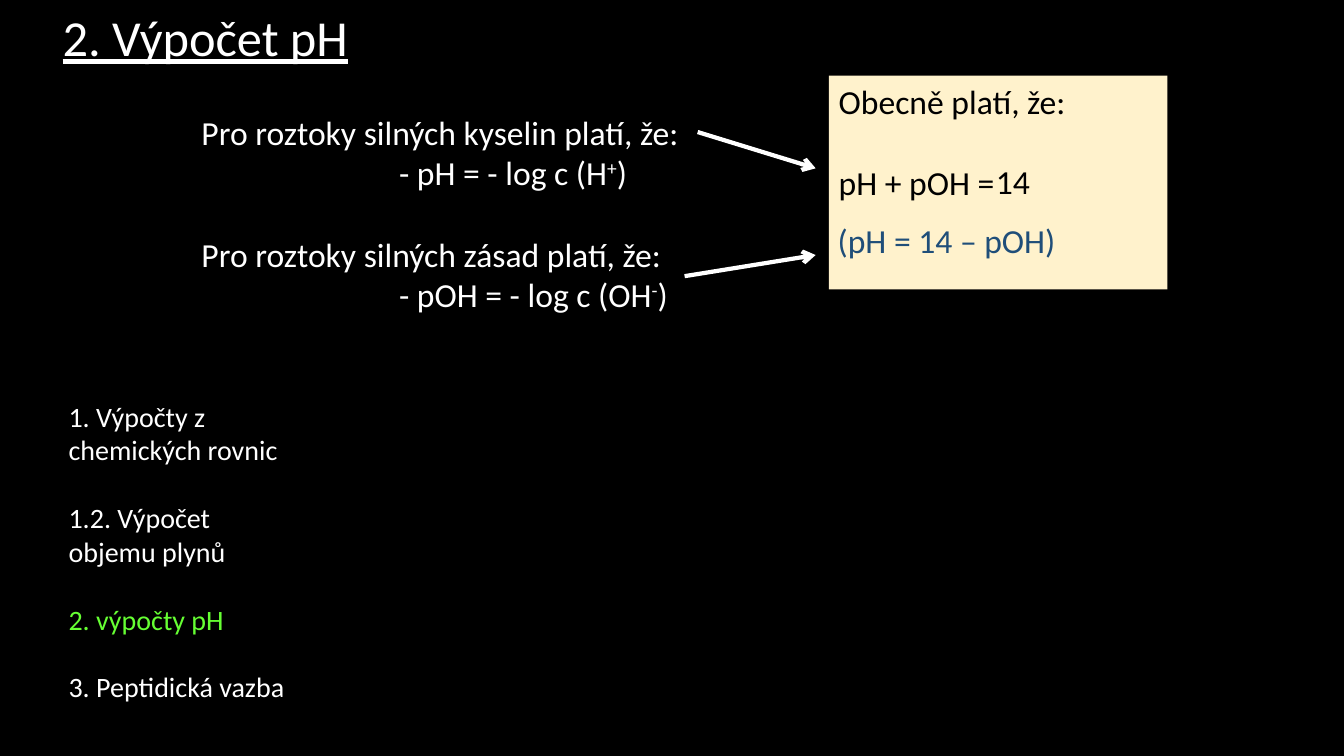
"""Build a slide on computing pH, with a chapter list."""
from dataclasses import dataclass

from lxml import etree
from pptx import Presentation
from pptx import util as u
from pptx.dml.color import RGBColor
from pptx.enum import shapes, text
from pptx.oxml import ns


@dataclass(frozen=True)
class Theme:
    """Colours, font and type sizes of the slide."""
    font: str = "Calibri"
    back: str = "000000"
    light: str = "FFFFFF"
    dark: str = "000000"
    note: str = "FFF2CC"
    blue: str = "1F4E79"
    green: str = "66FF33"
    head: int = 36
    main: int = 24
    list: int = 20


THEME = Theme()
LINE = 1.22


def paint(fill, color):
    """Give a fill one solid colour."""
    fill.solid()
    fill.fore_color.rgb = RGBColor.from_string(color)


def place(shape, box):
    """Move a shape to a box given in inches."""
    shape.left, shape.top, shape.width, shape.height = map(u.Inches, box)


def style(para, size, color):
    """Format a paragraph's runs and clear its spacing."""
    para.alignment = text.PP_ALIGN.LEFT
    para.space_before = para.space_after = u.Pt(0)
    for run in para.runs:
        run.font.name = THEME.font
        run.font.size = u.Pt(size)
        run.font.color.rgb = RGBColor.from_string(color)


def write(shape, lines, size, color, wrap=True):
    """Put lines at the top of a shape and return the paragraphs."""
    frame = shape.text_frame
    frame.text = "\n".join(lines)
    frame.word_wrap = wrap
    frame.auto_size = text.MSO_AUTO_SIZE.NONE
    frame.vertical_anchor = text.MSO_ANCHOR.TOP
    for para in frame.paragraphs:
        style(para, size, color)
    return frame.paragraphs


def label(slide, box, lines, color, wrap=False):
    """Add a text box and return its paragraphs."""
    shape = slide.shapes.add_textbox(*map(u.Inches, box))
    return write(shape, lines, THEME.main, color, wrap)


def title(slide, box):
    """Fill the underlined title."""
    shape = slide.shapes.title
    place(shape, box)
    para = write(shape, ["2. Výpočet pH"], THEME.head, THEME.light)[0]
    para.runs[0].font.underline = True


def rules(slide, box):
    """Write the rules for acids and bases with indented formulas."""
    forms = [("Pro roztoky silných kyselin platí, že:", "- pH = - log c (H", "+"),
             ("Pro roztoky silných zásad platí, že:", "- pOH = - log c (OH", "-")]
    lines = [line for rule, form, _ in forms for line in (rule, form)]
    paras = label(slide, box, lines, THEME.light, wrap=True)
    paras[2].space_before = u.Pt(THEME.main * LINE)
    for para, (_, _, sign) in zip(paras[1::2], forms):
        props = para._p.get_or_add_pPr()
        props.set("marL", str(u.Inches(1.96)))
        props.set("indent", "0")
        power = para.add_run()
        power.text = sign
        para.add_run().text = ")"
        style(para, THEME.main, THEME.light)
        power._r.get_or_add_rPr().set("baseline", "30000")


def arrow(slide, start, end):
    """Draw an open-headed arrow between two points."""
    line = slide.shapes.add_connector(
        shapes.MSO_CONNECTOR.STRAIGHT, *map(u.Inches, start + end))
    line.line.width = u.Pt(3)
    paint(line.line.fill, THEME.light)
    tip = etree.SubElement(line.line._get_or_add_ln(), ns.qn("a:tailEnd"))
    tip.set("type", "arrow")
    etree.SubElement(line._element.spPr, ns.qn("a:effectLst"))


def note(slide, box):
    """Draw the panel with the general rule and its result."""
    left, top, _, _ = box
    panel = slide.shapes.add_shape(
        shapes.MSO_SHAPE.RECTANGLE, *map(u.Inches, box))
    panel.shadow.inherit = False
    paint(panel.fill, THEME.note)
    panel.line.fill.background()
    paras = write(panel, ["Obecně platí, že:", "pH + pOH ="],
                  THEME.main, THEME.dark)
    paras[1].space_before = u.Pt(THEME.main * LINE)
    label(slide, (left + 1.56, top + 0.8, 0.54, 0.5), ["14"], THEME.dark)
    label(slide, (left - 0.01, top + 1.38, 2.38, 0.5),
          ["(pH = 14 – pOH)"], THEME.blue)


def chapters(slide, box):
    """List the chapters and mark the current one."""
    body = slide.placeholders[1]
    place(body, box)
    lines = ["1. Výpočty z chemických rovnic", "1.2. Výpočet objemu plynů",
             "2. výpočty pH", "3. Peptidická vazba"]
    paras = write(body, lines, THEME.list, THEME.light)
    body.text_frame.margin_top = u.Inches(0.12)
    for para in paras:
        props = para._p.get_or_add_pPr()
        props.set("marL", "0")
        props.set("indent", "0")
        etree.SubElement(props, ns.qn("a:buNone"))
    for para in paras[1:]:
        para.space_before = u.Pt(THEME.list * LINE)
    style_now = paras[2].runs[0].font
    style_now.color.rgb = RGBColor.from_string(THEME.green)


def main():
    """Build and save the slide."""
    deck = Presentation()
    deck.slide_width, deck.slide_height = u.Inches(13.33), u.Inches(7.5)
    slide = deck.slides.add_slide(deck.slide_layouts[1])
    paint(slide.background.fill, THEME.back)
    title(slide, (0.52, 0.01, 9.8, 0.71))
    rules(slide, (1.9, 1.06, 4.98, 2.93))
    arrow(slide, (6.92, 1.31), (8.09, 1.67))
    arrow(slide, (6.79, 2.74), (8.09, 2.53))
    note(slide, (8.22, 0.75, 3.36, 2.12))
    chapters(slide, (0.58, 3.84, 2.37, 3.63))
    deck.save("out.pptx")


if __name__ == "__main__":
    main()
